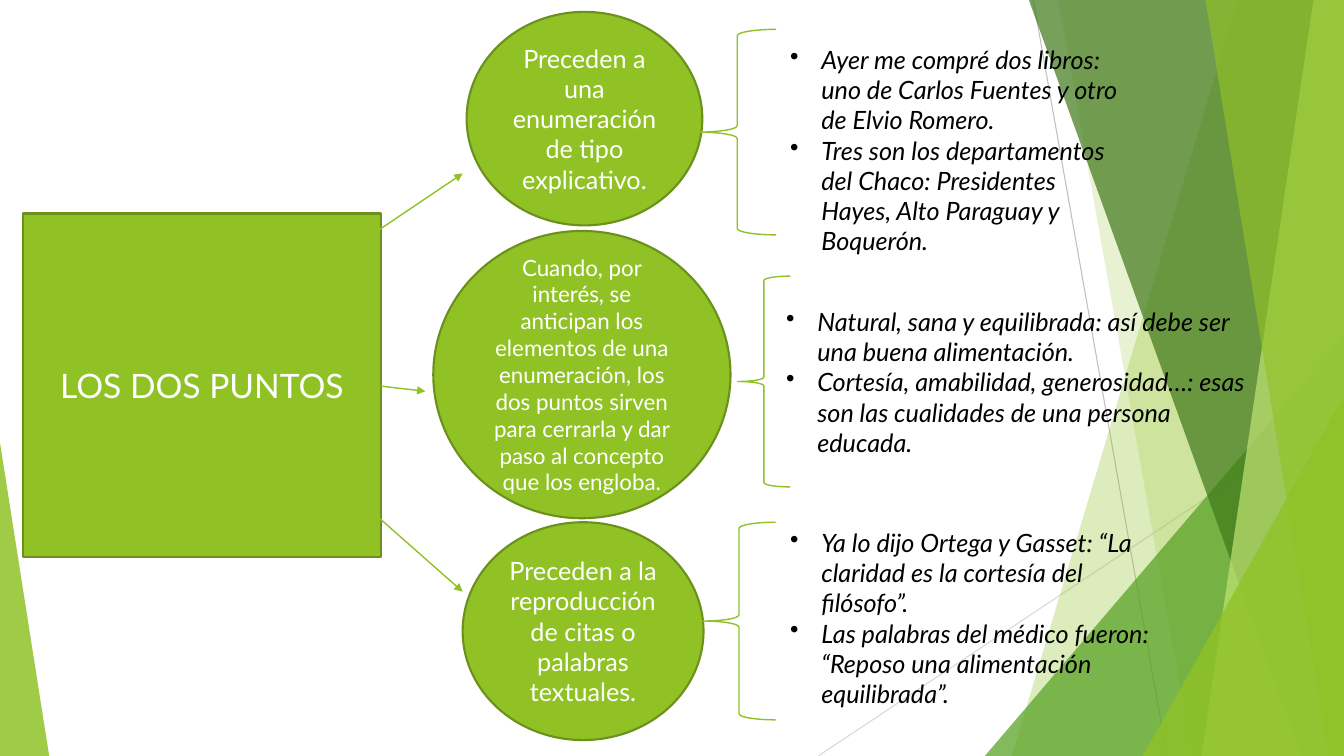
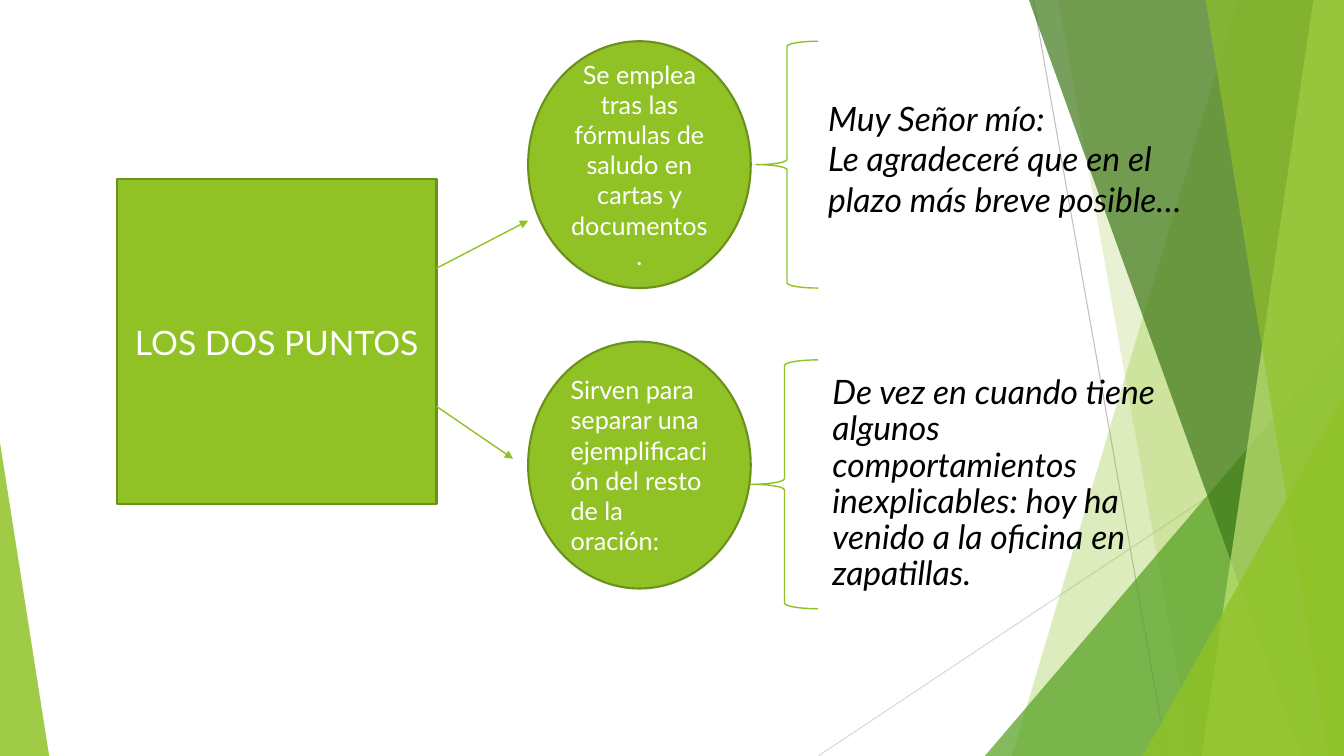
from pptx import Presentation
from pptx.dml.color import RGBColor
from pptx.enum.shapes import MSO_CONNECTOR, MSO_SHAPE
from pptx.enum.text import MSO_ANCHOR, MSO_AUTO_SIZE, PP_ALIGN
from pptx.oxml.ns import qn
from pptx.oxml.xmlchemy import OxmlElement
from pptx.util import Cm, Pt

STRAIGHT = MSO_CONNECTOR.STRAIGHT
ELLIPSE, BRACE, TRIANGLE = MSO_SHAPE.OVAL, MSO_SHAPE.LEFT_BRACE, MSO_SHAPE.ISOSCELES_TRIANGLE
MIDDLE, TOP = MSO_ANCHOR.MIDDLE, MSO_ANCHOR.TOP
FIXED, GROW = MSO_AUTO_SIZE.NONE, MSO_AUTO_SIZE.SHAPE_TO_FIT_TEXT
LEFT, CENTER = PP_ALIGN.LEFT, PP_ALIGN.CENTER

FONT = "Lato"
WIDTH, HEIGHT = 33.87, 19.05
BULLET_INDENT = 0.79
COLORS = {
    "green": "90C226", "edge": "6B901C", "leaf": "54A021", "forest": "3F7819",
    "lime": "C0E474", "gray": "BFBFBF", "pale gray": "D9D9D9",
    "white": "FFFFFF", "black": "000000",
}

RAYS = [
    ((26.04, 0), (29.41, HEIGHT), "gray"),
    ((WIDTH, 10.24), (20.62, HEIGHT), "pale gray"),
]
FACETS = [
    {"kind": "slice", "top_x": 31.19, "bottom_x": 25.5, "color": "green", "alpha": 30},
    {"kind": "slice", "top_x": 26.67, "bottom_x": 30.05, "color": "green", "alpha": 20},
    {"kind": "corner", "left": 24.82, "top": 8.46, "right": WIDTH, "tip": 1, "color": "leaf", "alpha": 72},
    {"kind": "slice", "top_x": 25.93, "bottom_x": 32.79, "color": "forest", "alpha": 70},
    {"kind": "slice", "top_x": 33.1, "bottom_x": 30.28, "color": "lime", "alpha": 70},
    {"kind": "slice", "top_x": 30.38, "bottom_x": 33.48, "color": "green", "alpha": 65},
    {"kind": "corner", "left": 28.8, "top": 9.98, "right": WIDTH, "tip": 1, "color": "green", "alpha": 80},
    {"kind": "corner", "left": 0, "top": 11.15, "right": 1.24, "tip": 0, "color": "green", "alpha": 85},
]

SLIDES = [
    {
        "title": "LOS DOS PUNTOS",
        "title_at": (0.58, 5.38, 9.02, 8.66),
        "branches": [
            {
                "rule": "Preceden a una enumeración de tipo explicativo.",
                "circle": (11.76, 0.3, 5.94, 5.38),
                "arrow": ((8.28, 6.65), (11.66, 4.37)),
                "brace": (17.6, 0.74, 1.96, 5.18),
                "examples": [
                    "Ayer me compré dos libros: uno de Carlos Fuentes y otro de Elvio Romero.",
                    "Tres son los departamentos del Chaco: Presidentes Hayes, Alto Paraguay y Boquerón.",
                ],
                "examples_at": (19.66, 0.99, 9.07, 4.88),
            },
            {
                "rule": "Cuando, por interés, se anticipan los elementos de una enumeración, los dos "
                        "puntos sirven para cerrarla y dar paso al concepto que los engloba.",
                "rule_size": 16,
                "circle": (10.92, 5.82, 7.49, 7.24),
                "arrow": ((9.6, 9.73), (10.72, 9.86)),
                "brace": (18.59, 6.96, 1.32, 5.31),
                "examples": [
                    "Natural, sana y equilibrada: así debe ser una buena alimentación.",
                    "Cortesía, amabilidad, generosidad…: esas son las cualidades de una persona educada.",
                ],
                "examples_at": (19.56, 7.59, 12.34, 4.11),
            },
            {
                "rule": "Preceden a la reproducción de citas o palabras textuales.",
                "circle": (11.66, 13.16, 6.07, 5.49),
                "arrow": ((8.69, 12.29), (11.66, 14.91)),
                "brace": (17.7, 13.16, 1.85, 4.98),
                "examples": [
                    "Ya lo dijo Ortega y Gasset: “La claridad es la cortesía del filósofo”.",
                    "Las palabras del médico fueron: “Reposo una alimentación equilibrada”.",
                ],
                "examples_at": (19.66, 13.16, 9.86, 5.64),
            },
        ],
    },
    {
        "title": "LOS DOS PUNTOS",
        "title_at": (2.95, 4.52, 8.05, 8.18),
        "branches": [
            {
                "rule": "Se emplea tras las fórmulas de saludo en cartas y documentos.",
                "circle": (13.31, 1.04, 5.61, 6.22),
                "arrow": ((11, 6.76), (13.31, 5.56)),
                "brace": (19.05, 1.04, 1.57, 6.22),
                "examples": ["Muy Señor mío:", "Le agradeceré que en el plazo más breve posible…"],
                "examples_at": (20.62, 2.34, 9.86, 3.33),
                "size": 24,
                "bullets": False,
            },
            {
                "rule": "Sirven para separar una ejemplificación del resto de la oración:",
                "rule_align": LEFT,
                "circle": (13.31, 8.61, 5.61, 6.22),
                "arrow": ((11, 10.24), (12.93, 11.56)),
                "brace": (18.92, 9.07, 1.7, 6.27),
                "examples": [
                    "De vez en cuando tiene algunos comportamientos inexplicables: "
                    "hoy ha venido a la oficina en zapatillas.",
                ],
                "examples_at": (20.98, 9.32, 8.64, 5.77),
                "size": 24,
                "bullets": False,
                "centered_block": True,
            },
        ],
    },
]


def rgb(name):
    return RGBColor.from_string(COLORS[name])


def child(parent, tag, **attributes):
    element = OxmlElement(tag)
    for key, value in attributes.items():
        element.set(key, str(value))
    parent.append(element)
    return element


def lengths(values):
    return [Cm(value) for value in values]


def add_line(slide, start, end, color, weight, arrow=False):
    line = slide.shapes.add_connector(STRAIGHT, *lengths(start + end))
    line.line.color.rgb = rgb(color)
    line.line.width = Pt(weight)
    if arrow:
        child(line.line._get_or_add_ln(), "a:tailEnd", type="triangle")
    child(line._element.spPr, "a:effectLst")
    return line


def add_facet(slide, facet):
    if facet["kind"] == "slice":
        corners = [(facet["top_x"], 0), (WIDTH, 0), (WIDTH, HEIGHT), (facet["bottom_x"], HEIGHT)]
        points = [tuple(lengths(corner)) for corner in corners]
        builder = slide.shapes.build_freeform(*points[0])
        builder.add_line_segments(points[1:], close=True)
        shape = builder.convert_to_shape()
    else:
        left, top = facet["left"], facet["top"]
        shape = slide.shapes.add_shape(
            TRIANGLE, *lengths((left, top, facet["right"] - left, HEIGHT - top)))
        shape.adjustments[0] = facet["tip"]
    shape.shadow.inherit = False
    shape.line.fill.background()
    shape.fill.solid()
    shape.fill.fore_color.rgb = rgb(facet["color"])
    color = shape._element.spPr.find(".//" + qn("a:srgbClr"))
    child(color, "a:alpha", val=facet["alpha"] * 1000)
    return shape


def decorate_layout(layout, slide):
    parts = [add_line(slide, *ray, 0.75) for ray in RAYS]
    parts += [add_facet(slide, facet) for facet in FACETS]
    for part in parts:
        layout.shapes._spTree.append(part._element)


def write(frame, texts, size, color, align=LEFT, italic=False, bullets=False):
    frame.word_wrap = True
    for index, text in enumerate(texts):
        para = frame.add_paragraph() if index else frame.paragraphs[0]
        para.alignment = align
        if bullets:
            properties = para._p.get_or_add_pPr()
            properties.set("marL", str(Cm(BULLET_INDENT)))
            properties.set("indent", str(-Cm(BULLET_INDENT)))
            child(properties, "a:buChar", char="•")
        span = para.add_run()
        span.text = text
        span.font.name = FONT
        span.font.size = Pt(size)
        span.font.italic = italic
        span.font.color.rgb = rgb(color)


def style_circle(circle, text, size, align=CENTER):
    circle.fill.solid()
    circle.fill.fore_color.rgb = rgb("green")
    circle.line.color.rgb = rgb("edge")
    circle.line.width = Pt(1.5)
    circle.shadow.inherit = False
    frame = circle.text_frame
    frame.auto_size = FIXED
    frame.vertical_anchor = MIDDLE
    write(frame, [text], size, "white", align)


def place_title(slide, text, place):
    title = slide.shapes.title
    title.left, title.top, title.width, title.height = lengths(place)
    child(child(title._element.spPr, "a:prstGeom", prst="ellipse"), "a:avLst")
    style_circle(title, text, 24)


def add_examples(slide, branch):
    box = slide.shapes.add_textbox(*lengths(branch["examples_at"]))
    frame = box.text_frame
    write(frame, branch["examples"], branch.get("size", 18), "black",
          italic=True, bullets=branch.get("bullets", True))
    if branch.get("centered_block"):
        frame.auto_size = FIXED
        frame.vertical_anchor = MIDDLE
        frame.margin_left = frame.margin_right = frame.margin_top = frame.margin_bottom = 0
        frame.paragraphs[0].line_spacing = 0.9
    else:
        frame.auto_size = GROW
        frame.vertical_anchor = TOP


def add_branch(slide, branch):
    circle = slide.shapes.add_shape(ELLIPSE, *lengths(branch["circle"]))
    style_circle(circle, branch["rule"], branch.get("rule_size", 18), branch.get("rule_align", CENTER))
    add_line(slide, *branch["arrow"], "green", 1, arrow=True)
    brace = slide.shapes.add_shape(BRACE, *lengths(branch["brace"]))
    brace.shadow.inherit = False
    brace.fill.background()
    brace.line.color.rgb = rgb("green")
    brace.line.width = Pt(1)
    add_examples(slide, branch)


def main():
    deck = Presentation()
    deck.slide_width, deck.slide_height = lengths((WIDTH, HEIGHT))
    layout = deck.slide_layouts[5]
    for holder in list(layout.placeholders)[1:]:
        layout.shapes._spTree.remove(holder._element)
    pages = [deck.slides.add_slide(layout) for _ in SLIDES]
    decorate_layout(layout, pages[0])
    for page, content in zip(pages, SLIDES):
        place_title(page, content["title"], content["title_at"])
        for branch in content["branches"]:
            add_branch(page, branch)
    deck.save("out.pptx")


if __name__ == "__main__":
    main()
